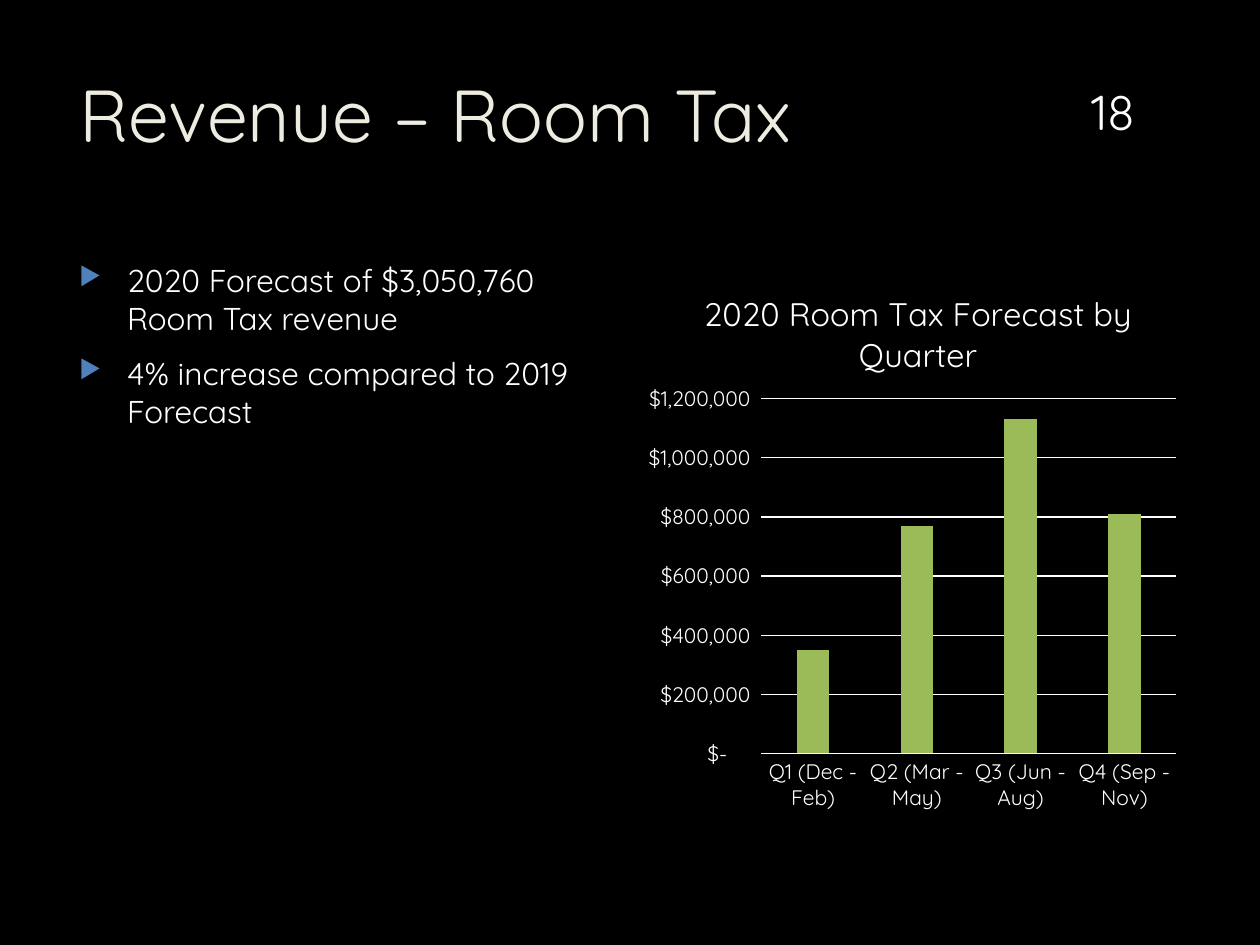
from lxml import etree
from pptx import Presentation
from pptx.chart.data import CategoryChartData
from pptx.dml.color import RGBColor
from pptx.enum.chart import XL_CHART_TYPE as ChartType, XL_TICK_MARK as TickMark
from pptx.enum.text import MSO_ANCHOR as Anchor, PP_ALIGN as Align
from pptx.oxml.ns import qn
from pptx.util import Inches, Pt

BLACK = RGBColor(0x00, 0x00, 0x00)
WHITE = RGBColor(0xFF, 0xFF, 0xFF)
CREAM = RGBColor(0xEE, 0xEC, 0xE1)
BLUE = RGBColor(0x4F, 0x81, 0xBD)
GREEN = RGBColor(0x9B, 0xBB, 0x59)
DOLLARS = r'_("$"* #,##0_);_("$"* \(#,##0\);_("$"* "-"??_);_(@_)'


class SlideBuilder:
    font_name = "Quicksand"

    def __init__(self, slide):
        self.slide = slide
        fill = slide.background.fill
        fill.solid()
        fill.fore_color.rgb = BLACK

    def style_font(self, font, size, color=WHITE):
        font.name = self.font_name
        font.size = Pt(size)
        font.bold = False
        font.color.rgb = color

    def add_text(self, box, lines, size, color=WHITE, align=Align.LEFT,
                 anchor=Anchor.TOP, bulleted=False):
        shape = self.slide.shapes.add_textbox(*map(Inches, box))
        text_frame = shape.text_frame
        text_frame.word_wrap = True
        text_frame.vertical_anchor = anchor
        text_frame.text = "\n".join(lines)
        for index, paragraph in enumerate(text_frame.paragraphs):
            paragraph.alignment = align
            if index:
                paragraph.space_before = Pt(10)
            if bulleted:
                self.add_bullet(paragraph)
            for run in paragraph.runs:
                self.style_font(run.font, size, color)

    def add_bullet(self, paragraph):
        properties = paragraph._p.get_or_add_pPr()
        properties.set("marL", str(Inches(0.38)))
        properties.set("indent", str(-Inches(0.38)))
        bullet_color = etree.SubElement(properties, qn("a:buClr"))
        etree.SubElement(bullet_color, qn("a:srgbClr"), val=str(BLUE))
        etree.SubElement(properties, qn("a:buSzPct"), val="80000")
        etree.SubElement(properties, qn("a:buChar"), char="▶")

    def set_layout(self, element, position, **values):
        for old_layout in element.findall(qn("c:layout")):
            element.remove(old_layout)
        layout = etree.Element(qn("c:layout"))
        manual = etree.SubElement(layout, qn("c:manualLayout"))
        for name, value in values.items():
            etree.SubElement(manual, qn(f"c:{name}"), val=str(value))
        element.insert(position, layout)

    def style_line(self, line):
        line.color.rgb = WHITE
        line.width = Pt(0.75)

    def add_column_chart(self, box, title, categories, values):
        data = CategoryChartData(number_format=DOLLARS)
        data.categories = categories
        data.add_series("Series 1", values)
        chart = self.slide.shapes.add_chart(
            ChartType.COLUMN_CLUSTERED, *map(Inches, box), data).chart
        self.style_font(chart.font, 10)
        chart.has_legend = False

        # Title
        chart.has_title = True
        chart.chart_title.include_in_layout = False
        title_frame = chart.chart_title.text_frame
        title_frame.text = title
        self.style_font(title_frame.paragraphs[0].runs[0].font, 18.6)
        self.set_layout(chart.chart_title._element, 1,
                        xMode="edge", yMode="edge", x=0.12, y=0.05)

        # Columns
        plot = chart.plots[0]
        plot.gap_width = 219
        plot.overlap = -27
        plot.vary_by_categories = False
        fill = plot.series[0].format.fill
        fill.solid()
        fill.fore_color.rgb = GREEN
        self.set_layout(chart._chartSpace.chart.plotArea, 0,
                        layoutTarget="inner", xMode="edge", yMode="edge",
                        x=0.234, y=0.252, w=0.747, h=0.626)

        # Axes
        for axis in (chart.category_axis, chart.value_axis):
            axis.major_tick_mark = axis.minor_tick_mark = TickMark.NONE
            self.style_font(axis.tick_labels.font, 12)
        self.style_line(chart.category_axis.format.line)
        value_axis = chart.value_axis
        value_axis.minimum_scale = 0
        value_axis.maximum_scale = 1200000
        value_axis.major_unit = 200000
        value_axis.format.line.fill.background()
        value_axis.tick_labels.number_format = DOLLARS
        value_axis.tick_labels.number_format_is_linked = False
        self.style_line(value_axis.major_gridlines.format.line)


def main():
    presentation = Presentation()
    presentation.slide_width = Inches(10)
    presentation.slide_height = Inches(7.5)
    builder = SlideBuilder(
        presentation.slides.add_slide(presentation.slide_layouts[6]))

    # Heading and slide number
    builder.add_text((0.53, 0.5, 7.72, 1.53), ["Revenue – Room Tax"], 42, CREAM)
    builder.add_text((8.49, 0.32, 0.69, 0.84), ["18"], 28,
                     align=Align.CENTER, anchor=Anchor.BOTTOM)

    # Key points
    builder.add_text((0.53, 2.02, 4.09, 4.59),
                     ["2020 Forecast of $3,050,760 Room Tax revenue",
                      "4% increase compared to 2019 Forecast"],
                     18, bulleted=True)

    # Quarterly forecast
    builder.add_column_chart(
        (5.01, 2.03, 4.41, 4.5), "2020 Room Tax Forecast by Quarter",
        ["Q1 (Dec - Feb)", "Q2 (Mar - May)", "Q3 (Jun - Aug)", "Q4 (Sep - Nov)"],
        [350000, 770000, 1130000, 810000])

    presentation.save("out.pptx")


if __name__ == "__main__":
    main()
